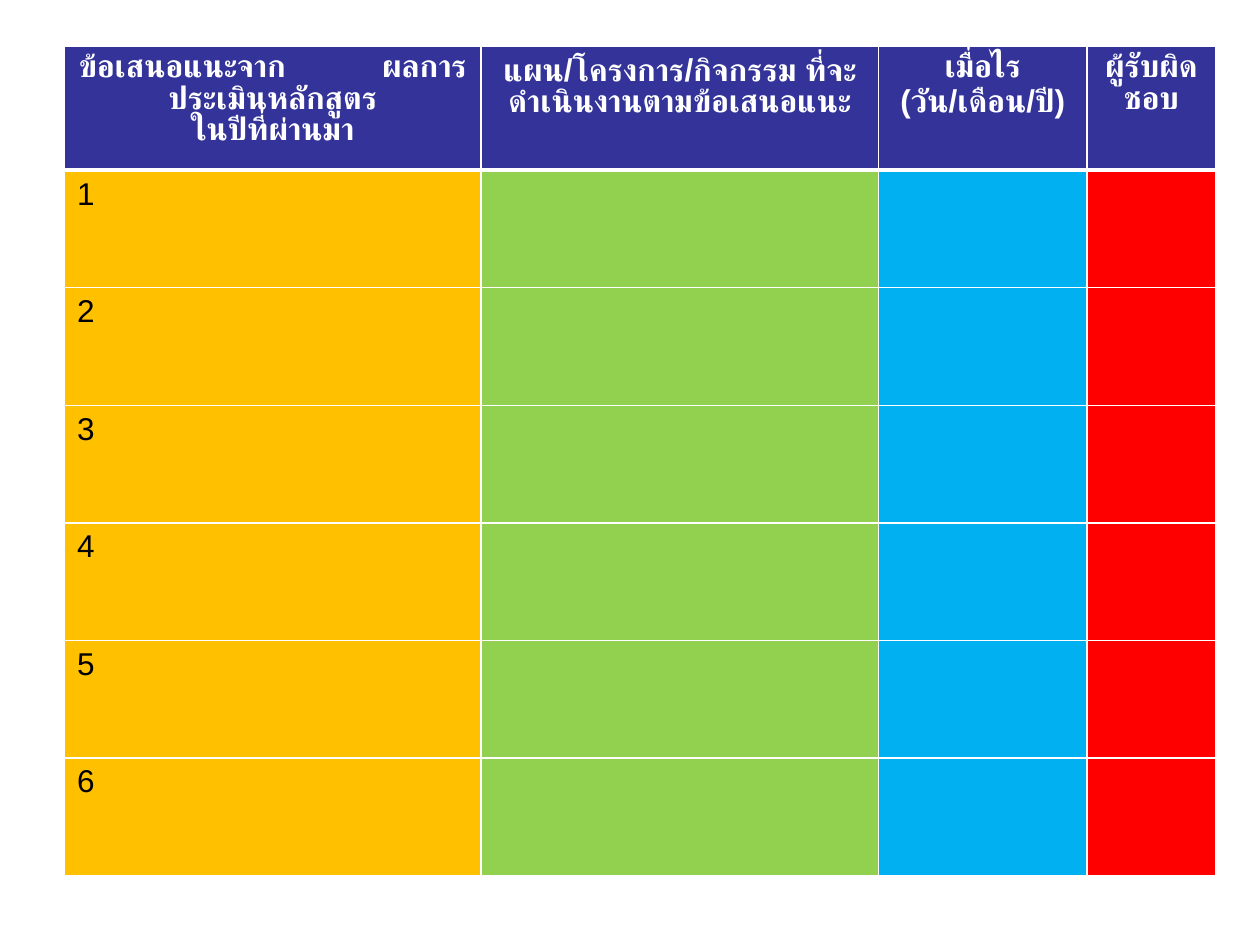
"""Build a slide with an action plan table for course review advice."""
from lxml import etree
from pptx import Presentation, util as u
from pptx.dml.color import RGBColor
from pptx.enum import text
from pptx.oxml import ns


def paint(fill, hue):
    fill.solid()
    fill.fore_color.rgb = RGBColor.from_string(hue)


def edge(cell, low):
    props = cell._tc.get_or_add_tcPr()
    for spot, (side, wide) in enumerate(zip("LRTB", (1, 1, 1, low))):
        line = etree.Element(ns.qn("a:ln" + side), w=str(u.Pt(wide)))
        solid = etree.SubElement(line, ns.qn("a:solidFill"))
        etree.SubElement(solid, ns.qn("a:srgbClr"), val="FFFFFF")
        props.insert(spot, line)


deck = Presentation()
deck.slide_width, deck.slide_height = u.Cm(25.4), u.Cm(19.05)
slide = deck.slides.add_slide(deck.slide_layouts[6])

wides = [8.4, 8.01, 4.2, 2.6]
highs = [2.5] + [2.37] * 6
hues = ["FFC000", "92D050", "00B0F0", "FF0000"]
heads = [
    [["ข้อเสนอแนะจาก", " ", "ผลการประเมินหลักสูตร"], ["ในปีที่ผ่านมา"]],
    [["แผน/โครงการ/กิจกรรม ที่จะดำเนินงานตามข้อเสนอแนะ"]],
    [["เมื่อไร"], ["(วัน/เดือน/ปี)"]],
    [["ผู้รับผิดชอบ"]],
]

table = slide.shapes.add_table(
    len(highs), len(wides), u.Cm(1.3), u.Cm(0.93), u.Cm(sum(wides)), u.Cm(sum(highs))
).table
for col, wide in zip(table.columns, wides):
    col.width = u.Cm(wide)

for i, high in enumerate(highs):
    table.rows[i].height = u.Cm(high)
    for j, hue in enumerate(hues):
        cell = table.cell(i, j)
        paint(cell.fill, hue if i else "333399")
        edge(cell, 1 if i else 3)
        if i:
            paras = [[str(i)]] if j == 0 else []
        else:
            paras = heads[j]
        frame = cell.text_frame
        for n, words in enumerate(paras):
            para = frame.add_paragraph() if n else frame.paragraphs[0]
            para.alignment = text.PP_ALIGN.LEFT if i else text.PP_ALIGN.CENTER
            for word in words:
                run = para.add_run()
                run.text = word
                run.font.name = "Arial"
                run.font.size = u.Pt(18)
                run.font.bold = i == 0
                paint(run.font.fill, "000000" if i else "FFFFFF")
                if word == " ":
                    run._r.get_or_add_rPr().set("spc", "5000")

deck.save("out.pptx")
